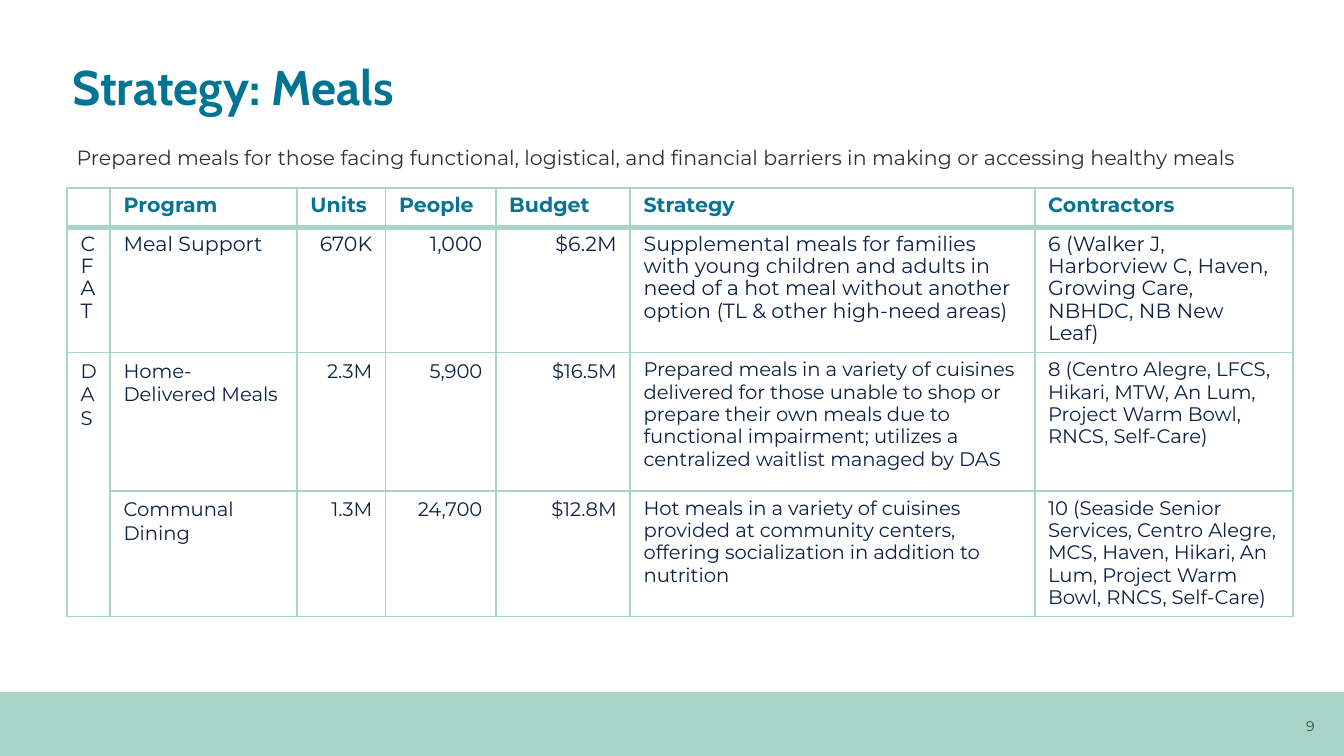
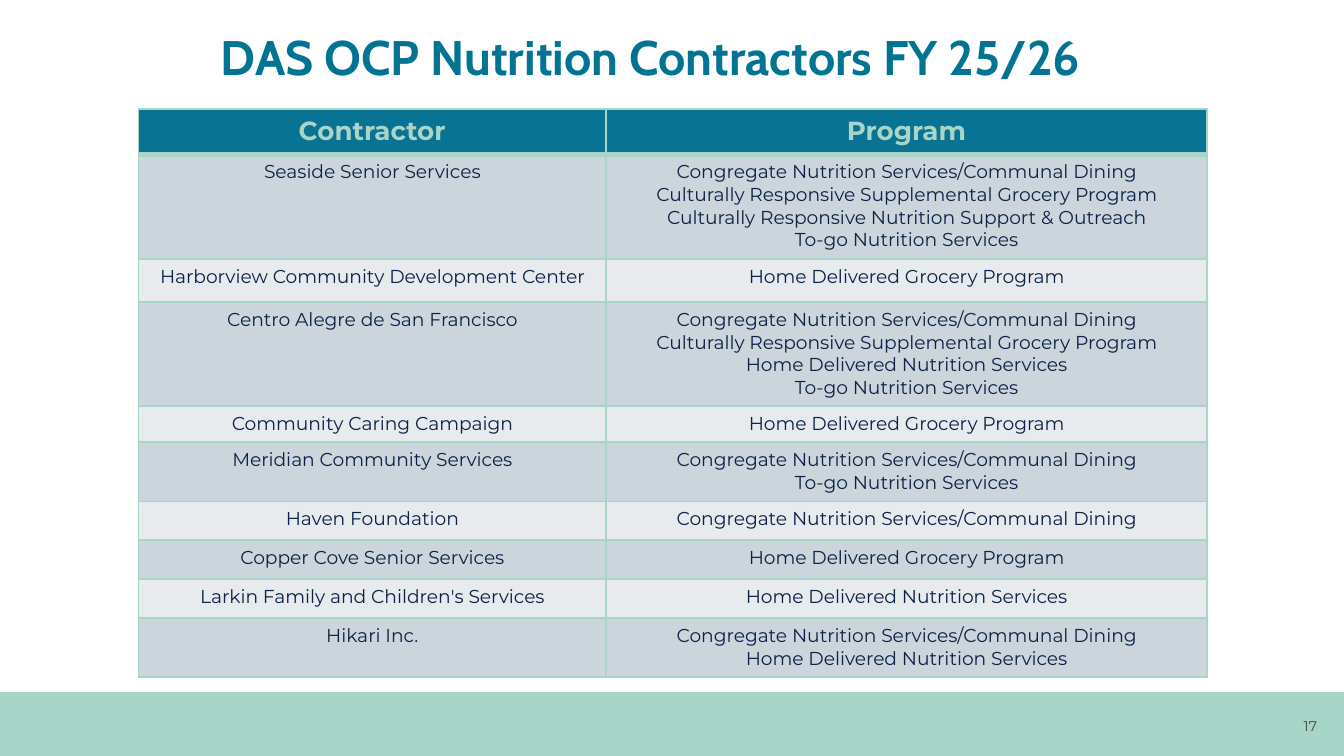
from lxml import etree
from pptx import Presentation
from pptx.dml.color import RGBColor
from pptx.enum import shapes, text
from pptx.oxml import ns
from pptx.util import Inches, Pt

HUES = {
    "band": "A7D5C7", "title": "017493", "page": "424640", "intro": "303430",
    "line": "A9D4C8", "head": "097394", "ink": "0C2246", "white": "FFFFFF",
    "dark": "CCD5DC", "light": "E7EBEE",
}
HEAD, BODY = "Cabin", "Montserrat"
LEFT, MID, RIGHT = text.PP_ALIGN.LEFT, text.PP_ALIGN.CENTER, text.PP_ALIGN.RIGHT

INTRO = ("Prepared meals for those facing functional, logistical, and financial "
         "barriers in making or accessing healthy meals")
MEALS = [
    ["", "Program", "Units", "People", "Budget", "Strategy", "Contractors"],
    ["CFAT", "Meal Support", "670K", "1,000", "$6.2M",
     "Supplemental meals for families with young children and adults in need of "
     "a hot meal without another option (TL & other high-need areas)",
     "6 (Walker J, Harborview C, Haven, Growing Care, NBHDC, NB New Leaf)"],
    ["D\nA\nS", "Home-Delivered Meals", "2.3M", "5,900", "$16.5M",
     "Prepared meals in a variety of cuisines delivered for those unable to shop "
     "or prepare their own meals due to functional impairment; utilizes a "
     "centralized waitlist managed by DAS",
     "8 (Centro Alegre, LFCS, Hikari, MTW, An Lum, Project Warm Bowl, RNCS, Self-Care)"],
    ["", "Communal Dining", "1.3M", "24,700", "$12.8M",
     "Hot meals in a variety of cuisines provided at community centers, offering "
     "socialization in addition to nutrition",
     "10 (Seaside Senior Services, Centro Alegre, MCS, Haven, Hikari, An Lum, "
     "Project Warm Bowl, RNCS, Self-Care)"],
]
MEAL_COLS = [0.32, 1.39, 0.66, 0.82, 1, 3.01, 1.92]
MEAL_ROWS = [0.29, 0.86, 1.03, 0.93]
MEAL_ALIGN = [LEFT, LEFT, RIGHT, RIGHT, RIGHT, LEFT, LEFT]

DINE = "Congregate Nutrition Services/Communal Dining"
SHOP = "Culturally Responsive Supplemental Grocery Program"
REACH = "Culturally Responsive Nutrition Support & Outreach"
TOGO = "To-go Nutrition Services"
BAGS = "Home Delivered Grocery Program"
HOME = "Home Delivered Nutrition Services"
FIRMS = [
    ("Contractor", ["Program"]),
    ("Seaside Senior Services", [DINE, SHOP, REACH, TOGO]),
    ("Harborview Community Development Center", [BAGS]),
    ("Centro Alegre de San Francisco", [DINE, SHOP, HOME, TOGO]),
    ("Community Caring Campaign", [BAGS]),
    ("Meridian Community Services", [DINE, TOGO]),
    ("Haven Foundation", [DINE]),
    ("Copper Cove Senior Services", [BAGS]),
    ("Larkin Family and Children's Services", [HOME]),
    ("Hikari Inc.", [DINE, HOME]),
]
FIRM_COLS = [3.48, 4.47]
FIRM_ROWS = [0.33, 0.78, 0.32, 0.77, 0.27, 0.44, 0.29, 0.29, 0.29, 0.44]


def tint(hue):
    return RGBColor.from_string(HUES[hue])


def write(frame, words, size, hue, font=BODY, bold=False, align=LEFT, gap=None):
    for i, line in enumerate(words.split("\n")):
        para = frame.add_paragraph() if i else frame.paragraphs[0]
        para.alignment = align
        if gap:
            para.line_spacing = gap
        if not line:
            para.font.size = Pt(size)
            continue
        run = para.add_run()
        run.text = line
        run.font.name, run.font.size, run.font.bold = font, Pt(size), bold
        run.font.color.rgb = tint(hue)


def place(shape, box, pads, anchor):
    shape.left, shape.top, shape.width, shape.height = map(Inches, box)
    frame = shape.text_frame
    frame.word_wrap = True
    frame.auto_size = text.MSO_AUTO_SIZE.NONE
    frame.vertical_anchor = anchor
    (frame.margin_left, frame.margin_top,
     frame.margin_right, frame.margin_bottom) = map(Inches, pads)
    return frame


def start(deck, kind, title, box, align, page):
    slide = deck.slides.add_slide(deck.slide_layouts[kind])
    band = slide.shapes.add_shape(shapes.MSO_SHAPE.RECTANGLE, 0, Inches(5.15),
                                  Inches(10), Inches(0.49))
    band.shadow.inherit = False
    band.fill.solid()
    band.fill.fore_color.rgb = tint("band")
    band.line.fill.background()
    middle = text.MSO_ANCHOR.MIDDLE
    frame = place(slide.shapes.title, box, (0.04, 0.07, 0.04, 0.07), middle)
    write(frame, title, 26, "title", HEAD, True, align, 0.9)
    note = slide.shapes.add_textbox(0, 0, 0, 0)
    frame = place(note, (9.5, 5.25, 0.5, 0.3), (0.1, 0.05, 0.1, 0.05), middle)
    write(frame, page, 7.5, "page", align=MID)
    return slide


def edge(cell, sides):
    props = cell._tc.get_or_add_tcPr()
    for side in "LRTB":
        line = etree.SubElement(props, ns.qn("a:ln" + side), w=str(Pt(sides.get(side, 1))))
        fill = etree.SubElement(line, ns.qn("a:solidFill"))
        etree.SubElement(fill, ns.qn("a:srgbClr"), val=HUES["line"])


def grid(slide, left, top, cols, rows, fills):
    table = slide.shapes.add_table(len(rows), len(cols), Inches(left), Inches(top),
                                   Inches(sum(cols)), Inches(sum(rows))).table
    table.horz_banding = False
    for col, width in zip(table.columns, cols):
        col.width = Inches(width)
    for r, (row, height) in enumerate(zip(table.rows, rows)):
        row.height = Inches(height)
        for cell in row.cells:
            edge(cell, {0: {"B": 3}, 1: {"T": 3}}.get(r, {}))
            cell.fill.solid()
            cell.fill.fore_color.rgb = tint(fills[r])
    return table


def meals(deck):
    slide = start(deck, 1, "Strategy: Meals", (0.5, 0.45, 5.8, 0.43), LEFT, "9")
    table = grid(slide, 0.5, 1.4, MEAL_COLS, MEAL_ROWS, ["white"] * len(MEALS))
    table.cell(2, 0).merge(table.cell(3, 0))
    for r, row in enumerate(MEALS):
        for c, words in enumerate(row):
            cell = table.cell(r, c)
            if cell.is_spanned:
                continue
            gap = Pt(12) if r < 2 or c > 4 else None
            write(cell.text_frame, words, 11 if r < 2 else 10.5,
                  "ink" if r else "head", bold=not r,
                  align=MEAL_ALIGN[c] if r else LEFT, gap=gap)
    frame = place(slide.placeholders[1], (0.5, 0.85, 9.41, 0.43),
                  (0.07, 0.15, 0.15, 0.07), text.MSO_ANCHOR.TOP)
    props = frame.paragraphs[0]._p.get_or_add_pPr()
    props.set("marL", "0")
    props.set("indent", "0")
    etree.SubElement(props, ns.qn("a:buNone"))
    frame.paragraphs[0].space_before = Pt(0)
    write(frame, INTRO, 11, "intro", gap=Pt(18.8))


def firms(deck):
    slide = start(deck, 5, "DAS OCP Nutrition Contractors FY 25/26 ",
                  (0.5, 0.23, 8.77, 0.43), MID, "17")
    fills = ["head"] + [("light", "dark")[r % 2] for r in range(1, len(FIRMS))]
    table = grid(slide, 1.03, 0.81, FIRM_COLS, FIRM_ROWS, fills)
    for r, (firm, plans) in enumerate(FIRMS):
        for c, words in enumerate((firm, "\n".join(plans))):
            write(table.cell(r, c).text_frame, words, 10 if r else 14,
                  "ink" if r else "line", bold=not r, align=MID)


def main():
    deck = Presentation()
    deck.slide_width = Inches(10)
    deck.slide_height = deck.slide_width * 9 // 16
    meals(deck)
    firms(deck)
    deck.save("out.pptx")


if __name__ == "__main__":
    main()
